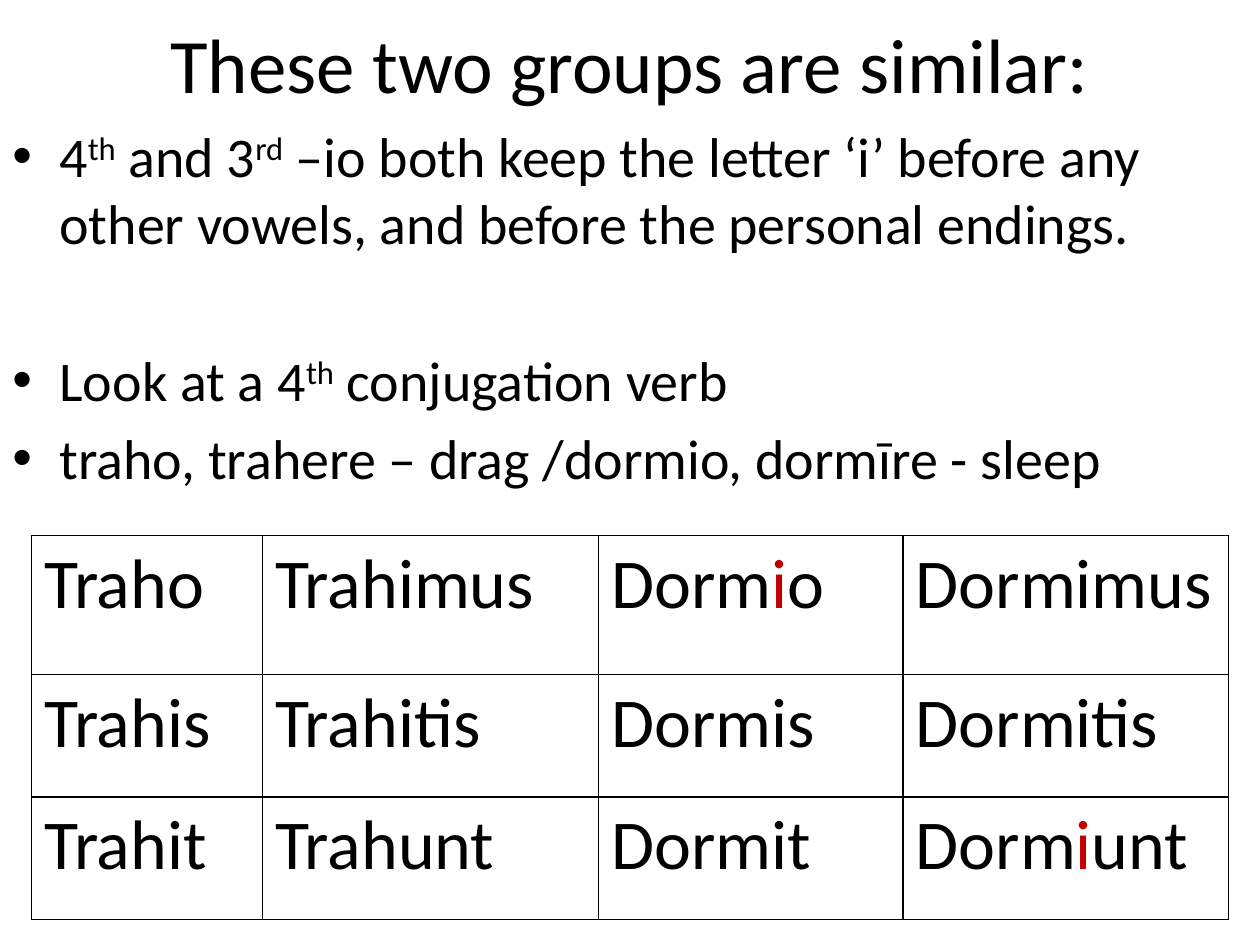
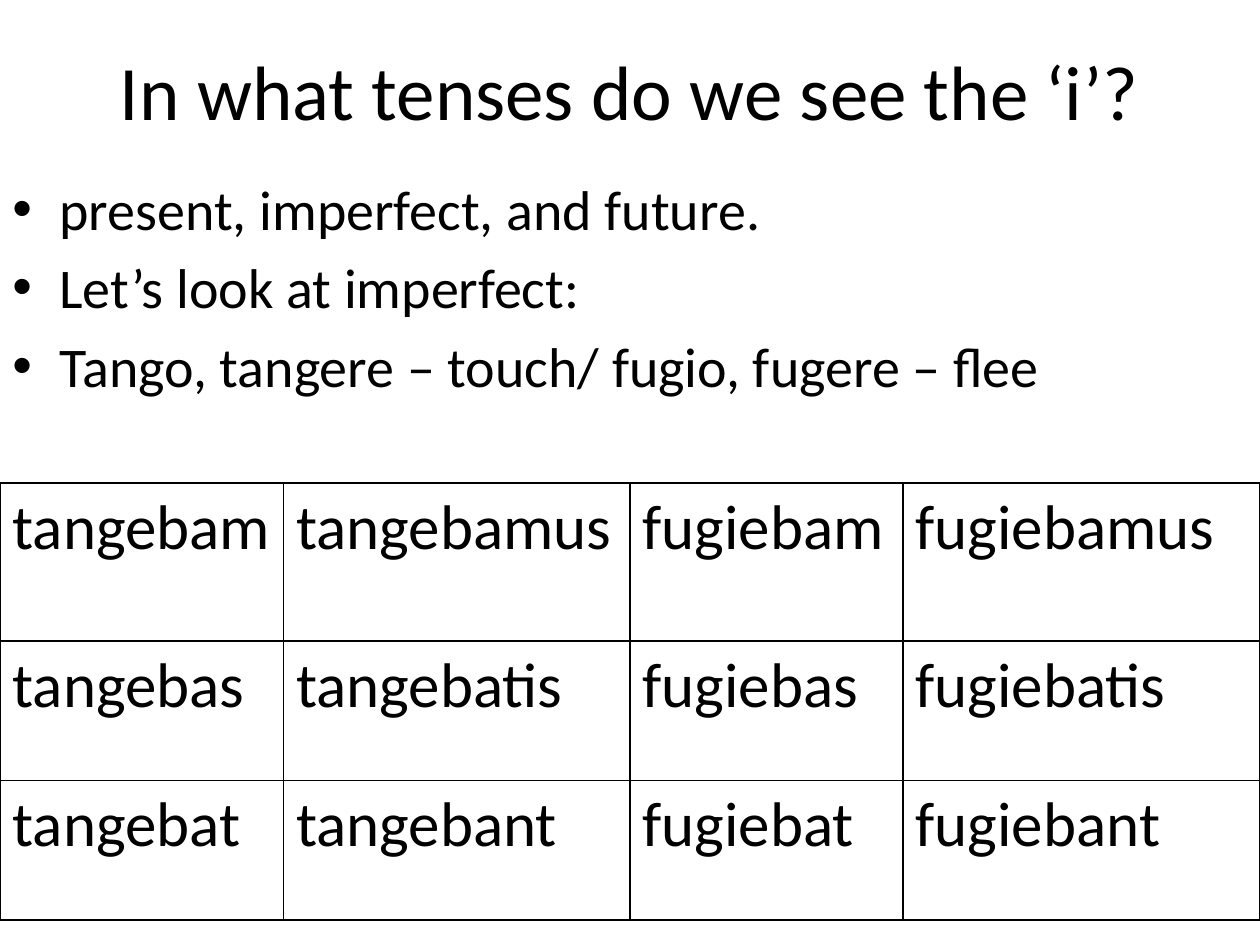
from lxml.etree import SubElement
from pptx import Presentation
from pptx.dml.color import RGBColor
from pptx.enum.text import MSO_ANCHOR, PP_ALIGN
from pptx.oxml.ns import qn
from pptx.util import Cm, Pt

BLACK = RGBColor(0x00, 0x00, 0x00)
RED = RGBColor(0xC0, 0x00, 0x00)
FONT = "Calibri"
TITLE_SIZE = 44
BODY_SIZE = 32
BULLET_INDENT = Cm(0.95)
BULLET_GAP = 6.4
WIDE_GAP = 51
ROW_WEIGHTS = (1.13, 1, 1)


def raise_run(r):
    """Set a run as superscript."""
    r.font._element.set("baseline", "30000")


def redden_run(r):
    """Colour a run red."""
    r.font.color.rgb = RED


def write(p, text, size, mark=None):
    """Write text into a paragraph, applying mark to parts between bars."""
    for i, part in enumerate(text.split("|")):
        r = p.add_run()
        r.text = part
        r.font.name = FONT
        r.font.size = Pt(size)
        r.font.color.rgb = BLACK
        if i % 2:
            mark(r)


def add_box(slide, box):
    """Add a wrapping text box and return its text frame."""
    tf = slide.shapes.add_textbox(*map(Cm, box)).text_frame
    tf.word_wrap = True
    return tf


def add_title(slide, box, text):
    """Add a centred slide title."""
    tf = add_box(slide, box)
    tf.vertical_anchor = MSO_ANCHOR.MIDDLE
    p = tf.paragraphs[0]
    p.alignment = PP_ALIGN.CENTER
    write(p, text, TITLE_SIZE)


def add_bullets(slide, box, bullets):
    """Add a bulleted list of (text, space before) pairs."""
    tf = add_box(slide, box)
    for i, (text, gap) in enumerate(bullets):
        p = tf.add_paragraph() if i else tf.paragraphs[0]
        p.space_before = Pt(gap)
        pPr = p._p.get_or_add_pPr()
        pPr.set("marL", str(BULLET_INDENT))
        pPr.set("indent", str(-BULLET_INDENT))
        SubElement(pPr, qn("a:buFont"), typeface="Arial")
        SubElement(pPr, qn("a:buChar"), char="•")
        write(p, text, BODY_SIZE, raise_run)


def add_borders(cell):
    """Draw a thin black line on each side of a cell."""
    tcPr = cell._tc.get_or_add_tcPr()
    for i, side in enumerate(("lnL", "lnR", "lnT", "lnB")):
        ln = tcPr.makeelement(qn(f"a:{side}"), w=str(Pt(1)))
        fill = SubElement(ln, qn("a:solidFill"))
        SubElement(fill, qn("a:srgbClr"), val=str(BLACK))
        tcPr.insert(i, ln)


def add_verb_table(slide, box, col_weights, size, rows):
    """Add a conjugation table with weighted columns and rows."""
    left, top, width, height = box
    table = slide.shapes.add_table(
        len(rows), len(col_weights), *map(Cm, box)).table
    table.first_row = False
    table.horz_banding = False
    for col, weight in zip(table.columns, col_weights):
        col.width = Cm(width * weight / sum(col_weights))
    for row, weight, forms in zip(table.rows, ROW_WEIGHTS, rows):
        row.height = Cm(height * weight / sum(ROW_WEIGHTS))
        for cell, form in zip(row.cells, forms.split()):
            cell.fill.background()
            add_borders(cell)
            write(cell.text_frame.paragraphs[0], form, size, redden_run)


def build_similar_groups(slide):
    """Build the slide comparing third and fourth conjugation."""
    add_title(slide, (0, 0, 25.4, 2.54), "These two groups are similar:")
    add_bullets(slide, (0, 2.33, 25.4, 16.72), [
        ("4|th| and 3|rd| –io both keep the letter ‘i’ before any other "
         "vowels, and before the personal endings.", BULLET_GAP),
        ("Look at a 4|th| conjugation verb", WIDE_GAP),
        ("traho, trahere – drag /dormio, dormīre - sleep", BULLET_GAP),
    ])
    add_verb_table(slide, (0.64, 10.8, 24.13, 7.74), (22, 32, 29, 31), 40, [
        "Traho Trahimus Dorm|i|o Dormimus",
        "Trahis Trahitis Dormis Dormitis",
        "Trahit Trahunt Dormit Dorm|i|unt",
    ])


def build_imperfect(slide):
    """Build the slide on the imperfect tense."""
    add_title(slide, (0, 0, 25.4, 3.6), "In what tenses do we see the ‘i’?")
    add_bullets(slide, (0, 3.39, 25.4, 15.66), [
        ("present, imperfect, and future.", BULLET_GAP),
        ("Let’s look at imperfect:", BULLET_GAP),
        ("Tango, tangere – touch/ fugio, fugere – flee", BULLET_GAP),
    ])
    add_verb_table(slide, (0, 9.74, 25.4, 8.81), (27, 33, 26, 34), 36, [
        "tangebam tangebamus fugiebam fugiebamus",
        "tangebas tangebatis fugiebas fugiebatis",
        "tangebat tangebant fugiebat fugiebant",
    ])


def main():
    """Build and save the presentation."""
    prs = Presentation()
    prs.slide_width = Cm(25.4)
    prs.slide_height = Cm(19.05)
    for build in (build_similar_groups, build_imperfect):
        build(prs.slides.add_slide(prs.slide_layouts[6]))
    prs.save("out.pptx")


if __name__ == "__main__":
    main()
